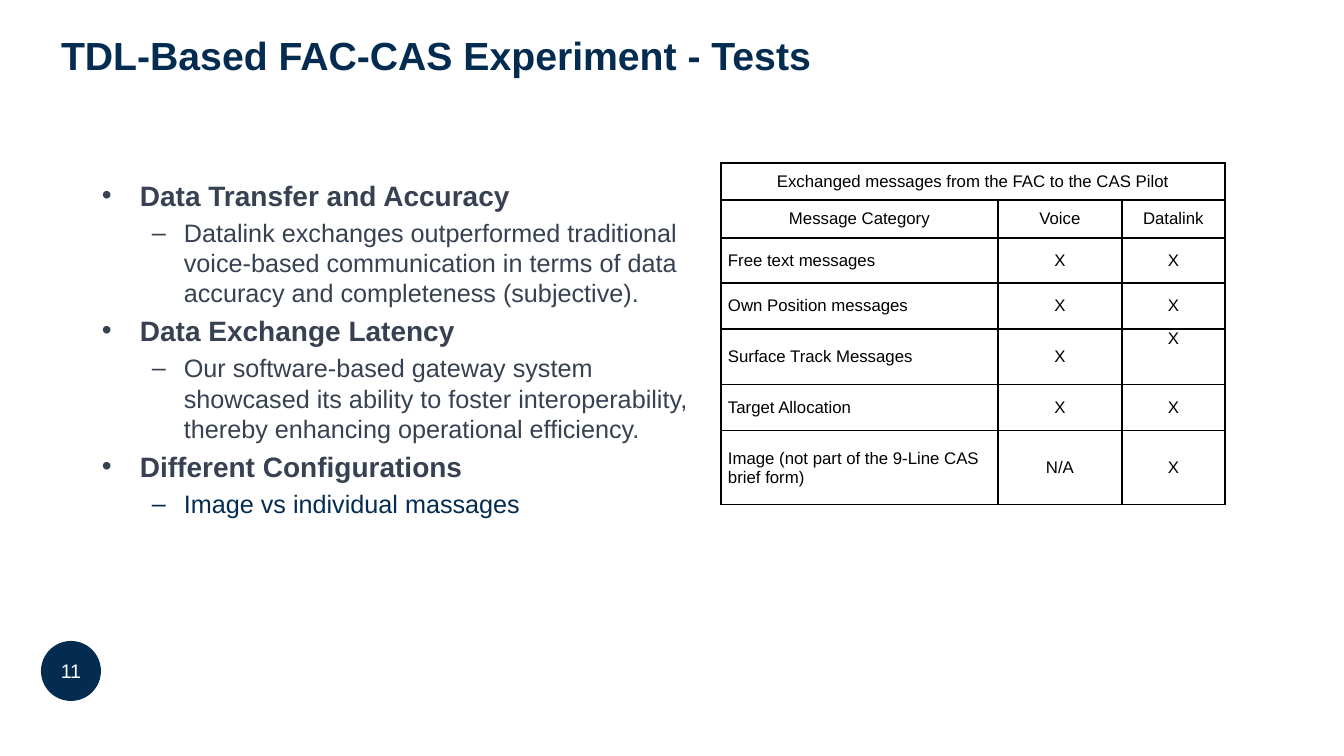
from lxml.etree import SubElement
from pptx import Presentation
from pptx.dml.color import RGBColor
from pptx.enum.shapes import MSO_SHAPE
from pptx.enum.text import MSO_ANCHOR as Anchor, PP_ALIGN as Align
from pptx.oxml.ns import qn
from pptx.util import Emu, Pt

PX = 914400 / 100.8
NAVY, SLATE, BLACK, WHITE = "032C50", "374151", "000000", "FFFFFF"

TOPICS = [
    ("Data Transfer and Accuracy",
     "Datalink exchanges outperformed traditional voice-based communication "
     "in terms of data accuracy and completeness (subjective).", SLATE),
    ("Data Exchange Latency",
     "Our software-based gateway system showcased its ability to foster "
     "interoperability, thereby enhancing operational efficiency.", SLATE),
    ("Different Configurations", "Image vs individual massages", NAVY),
]
MESSAGES = [
    ("Exchanged messages from the FAC to the CAS Pilot", "", ""),
    ("Message Category", "Voice", "Datalink"),
    ("Free text messages", "X", "X"),
    ("Own Position messages", "X", "X"),
    ("Surface Track Messages", "X", "X"),
    ("Target Allocation", "X", "X"),
    ("Image (not part of the 9-Line CAS brief form)", "N/A", "X"),
]
HEADER_ROWS = 2
COLUMN_WIDTHS = [277, 124, 103]
ROW_HEIGHTS = [37, 38, 45, 46, 56, 46, 74]


def px(length):
    return Emu(round(length * PX))


def rgb(value):
    return RGBColor.from_string(value)


class SlideBuilder:
    def __init__(self, deck, font_name):
        self.page = deck.slides.add_slide(deck.slide_layouts[5])
        self.font_name = font_name

    def style(self, para, size, color, bold=False, align=Align.LEFT):
        para.alignment = align
        font = para.font
        font.name, font.size, font.bold = self.font_name, Pt(size), bold
        font.color.rgb = rgb(color)

    def place(self, box, left, top, width, height):
        box.left, box.top, box.width, box.height = map(px, (left, top, width, height))

    def title(self, text, *bounds):
        box = self.page.shapes.title
        self.place(box, *bounds)
        box.text_frame.text = text
        box.text_frame.vertical_anchor = Anchor.MIDDLE
        self.style(box.text_frame.paragraphs[0], 28, NAVY, bold=True)

    def number_badge(self, text, *bounds):
        badge = self.page.shapes.add_shape(MSO_SHAPE.OVAL, *map(px, bounds))
        badge.shadow.inherit = False
        badge.fill.solid()
        badge.fill.fore_color.rgb = rgb(NAVY)
        badge.line.fill.background()
        frame = badge.text_frame
        frame.text = text
        frame.vertical_anchor = Anchor.MIDDLE
        frame.margin_left = frame.margin_right = px(8)
        frame.margin_top = frame.margin_bottom = 0
        self.style(frame.paragraphs[0], 14, WHITE, align=Align.CENTER)

    def bullet(self, para, symbol, left, hanging):
        props = para._p.get_or_add_pPr()
        props.set("marL", str(px(left)))
        props.set("indent", str(-px(hanging)))
        SubElement(props, qn("a:buFont"), typeface=self.font_name)
        SubElement(props, qn("a:buChar"), char=symbol)

    def topic_list(self, topics, *bounds):
        frame = self.page.shapes.add_textbox(*map(px, bounds)).text_frame
        frame.word_wrap = True
        frame.margin_top = px(45)
        for index, (heading, detail, detail_color) in enumerate(topics):
            para = frame.add_paragraph() if index else frame.paragraphs[0]
            para.text = heading
            if index:
                para.space_before = Pt(4)
            self.bullet(para, "•", 38, 38)
            self.style(para, 20, SLATE, bold=True)

            para = frame.add_paragraph()
            para.text, para.level = detail, 1
            para.space_before = Pt(4)
            self.bullet(para, "–", 82, 32)
            self.style(para, 18, detail_color)

    def cell_borders(self, cell):
        props = cell._tc.get_or_add_tcPr()
        for index, side in enumerate(("a:lnL", "a:lnR", "a:lnT", "a:lnB")):
            line = props.makeelement(qn(side), {"w": str(Pt(1))})
            fill = SubElement(line, qn("a:solidFill"))
            SubElement(fill, qn("a:srgbClr"), val=BLACK)
            props.insert(index, line)

    def message_table(self, rows, left, top):
        bounds = left, top, sum(COLUMN_WIDTHS), sum(ROW_HEIGHTS)
        table = self.page.shapes.add_table(
            len(rows), len(COLUMN_WIDTHS), *map(px, bounds)).table
        for column, width in zip(table.columns, COLUMN_WIDTHS):
            column.width = px(width)
        for row, height in zip(table.rows, ROW_HEIGHTS):
            row.height = px(height)
        for r, texts in enumerate(rows):
            for c, text in enumerate(texts):
                cell = table.cell(r, c)
                cell.text = text
                cell.fill.background()
                cell.vertical_anchor = Anchor.MIDDLE
                cell.margin_left = cell.margin_right = px(7)
                cell.margin_top = cell.margin_bottom = 0
                is_label = c == 0 and r >= HEADER_ROWS
                self.style(cell.text_frame.paragraphs[0], 12, BLACK,
                           align=Align.LEFT if is_label else Align.CENTER)
                self.cell_borders(cell)
        table.cell(0, 0).merge(table.cell(0, len(COLUMN_WIDTHS) - 1))
        table.cell(4, 2).vertical_anchor = Anchor.TOP


def main():
    deck = Presentation()
    deck.slide_width, deck.slide_height = px(1344), px(756)
    slide = SlideBuilder(deck, "Arial")
    slide.number_badge("11", 41, 641, 60, 60)
    slide.title("TDL-Based FAC-CAS Experiment - Tests", 51, 1, 1210, 107)
    slide.message_table(MESSAGES, 721, 163)
    slide.topic_list(TOPICS, 92, 133, 611, 535)
    deck.save("out.pptx")


if __name__ == "__main__":
    main()
